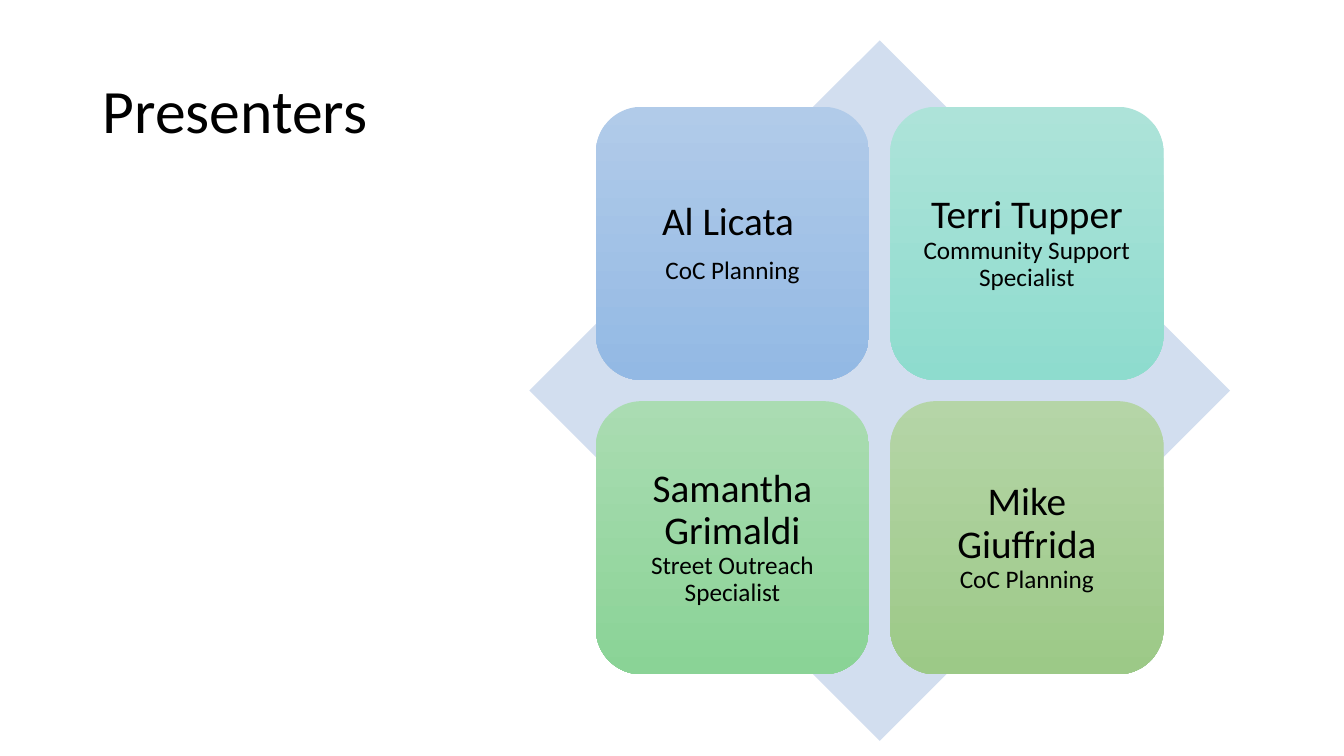
import pptx
import pptx.util
import pptx.dml.color
import pptx.enum.shapes
import pptx.enum.text

Inches = pptx.util.Inches
Kind = pptx.enum.shapes.MSO_SHAPE


def tint(code):
    return pptx.dml.color.RGBColor.from_string(code)


class Deck:
    """Holds the text style and the current slide."""

    font = {"name": "Calibri"}
    ink = "000000"

    def __init__(self):
        self.file = pptx.Presentation()
        self.file.slide_width = Inches(13.33)
        self.file.slide_height = Inches(7.5)
        self.slide = self.file.slides.add_slide(self.file.slide_layouts[6])

    def apply(self, item, form):
        for key, value in form.items():
            setattr(item, key, value)

    def frame(self, shape, pad):
        frame = shape.text_frame
        form = {"margin_" + side: Inches(pad) for side in ("left", "right", "top", "bottom")}
        form["word_wrap"] = True
        form["vertical_anchor"] = pptx.enum.text.MSO_ANCHOR.MIDDLE
        self.apply(frame, form)
        return frame

    def label(self, para, text, size):
        run = para.add_run()
        run.text = text
        self.apply(run.font, {**self.font, "size": pptx.util.Pt(size)})
        run.font.color.rgb = tint(self.ink)

    def title(self, text, left, top, width, height):
        box = self.slide.shapes.add_textbox(*map(Inches, (left, top, width, height)))
        para = self.frame(box, 0.1).paragraphs[0]
        para.line_spacing = 0.9
        self.label(para, text, 44)

    def shape(self, kind, left, top, side, *fills):
        shape = self.slide.shapes.add_shape(kind, *map(Inches, (left, top, side, side)))
        shape.shadow.inherit = False
        shape.line.fill.background()
        if len(fills) == 1:
            shape.fill.solid()
            shape.fill.fore_color.rgb = tint(fills[0])
        else:
            shape.fill.gradient()
            shape.fill.gradient_angle = 270
            for stop, code in zip(shape.fill.gradient_stops, fills):
                stop.color.rgb = tint(code)
        return shape

    def card(self, name, role, split, left, top, side, *fills):
        frame = self.frame(self.shape(Kind.ROUNDED_RECTANGLE, left, top, side, *fills), 0.12)
        form = {"alignment": pptx.enum.text.PP_ALIGN.CENTER, "line_spacing": 0.9}
        para = frame.paragraphs[0]
        self.apply(para, form)
        self.label(para, name, 28)
        if split:
            para.space_after = pptx.util.Pt(9.8)
            para = frame.add_paragraph()
            self.apply(para, form)
        else:
            para.add_line_break()
        self.label(para, role, 18)


def main():
    deck = Deck()
    deck.title("Presenters", 0.92, 0.4, 11.5, 1.45)
    deck.shape(Kind.DIAMOND, 5.25, 0.4, 6.95, "D2DEEF")
    cards = [
        ("Al Licata ", "CoC Planning", True, "B1CBE9", "93B9E4"),
        ("Terri Tupper", "Community Support Specialist", False, "ADE3D9", "8EDCCE"),
        ("Samantha Grimaldi", "Street Outreach Specialist", False, "AADCB2", "8AD396"),
        ("Mike Giuffrida", "CoC Planning", False, "B5D5A7", "9CC987"),
    ]
    step = 2.92
    for spot, (name, role, split, light, dark) in enumerate(cards):
        row, col = divmod(spot, 2)
        deck.card(name, role, split, 5.91 + col * step, 1.06 + row * step, 2.71, light, dark)
    deck.file.save("out.pptx")


if __name__ == "__main__":
    main()
